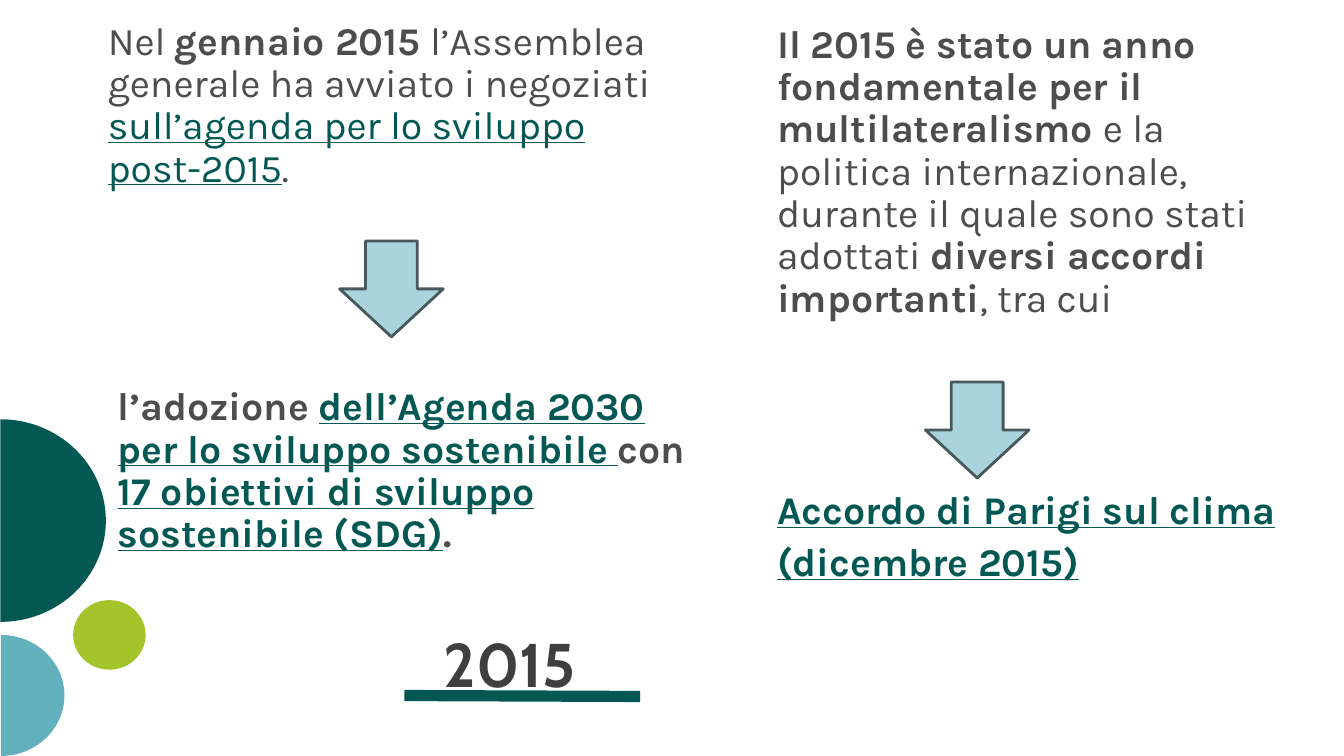
import pptx
import pptx.util
import pptx.dml.color
import pptx.enum.shapes
import pptx.enum.text
import pptx.oxml

Pt = pptx.util.Pt
PRESETS = pptx.enum.shapes.MSO_SHAPE
TEAL, GREY, DARK = "035854", "4D4D4D", "3F3F3F"
SKY, LIME, PALE, SLATE = "64B1BE", "A3C42A", "A9D4DB", "47595C"


def colour(value):
    return pptx.dml.color.RGBColor.from_string(value)


def place(item, left, top, width, height):
    item.left, item.top = Pt(left), Pt(top)
    item.width, item.height = Pt(width), Pt(height)


def set_frame(frame, insets, anchor=pptx.enum.text.MSO_ANCHOR.TOP):
    frame.word_wrap = True
    frame.auto_size = pptx.enum.text.MSO_AUTO_SIZE.NONE
    frame.vertical_anchor = anchor
    left, top, right, bottom = insets
    frame.margin_left, frame.margin_top = Pt(left), Pt(top)
    frame.margin_right, frame.margin_bottom = Pt(right), Pt(bottom)


def write(paragraph, runs, size=28, font="Karla", indent=18, spacing=0.9, before=0):
    properties = paragraph._p.get_or_add_pPr()
    properties.set("marL", str(Pt(indent)))
    properties.set("indent", "0")
    pptx.oxml.ns
    bullet = pptx.oxml.xmlchemy.OxmlElement("a:buNone")
    properties.append(bullet)
    paragraph.alignment = pptx.enum.text.PP_ALIGN.LEFT
    paragraph.line_spacing = spacing
    paragraph.space_before = Pt(before)
    paragraph.space_after = Pt(0)
    for wording, shade, bold, underline in runs:
        run = paragraph.add_run()
        run.text = wording
        run.font.size = Pt(size)
        run.font.name = font
        run.font.bold = bold
        run.font.underline = underline
        run.font.color.rgb = colour(shade)


def add_filled(shapes, preset, box, fill):
    shape = shapes.add_shape(preset, *[Pt(length) for length in box])
    shape.shadow.inherit = False
    shape.fill.solid()
    shape.fill.fore_color.rgb = colour(fill)
    shape.line.fill.background()
    return shape


def add_down_arrow(slide, left, top):
    arrow = add_filled(slide.shapes, PRESETS.DOWN_ARROW, (left, top, 74, 68.5), PALE)
    arrow.line.fill.solid()
    arrow.line.color.rgb = colour(SLATE)
    arrow.line.width = Pt(2)


def add_circles(slide, left, top):
    circles = slide.shapes.add_group_shape().shapes
    for preset, x, y, width, height, fill in (
        (PRESETS.PIE, -72, 0, 144.7, 150.5, TEAL),
        (PRESETS.PIE, -42.5, 154.8, 86.4, 90.7, SKY),
        (PRESETS.OVAL, 53.3, 131, 49.7, 51.8, LIME),
    ):
        circle = add_filled(circles, preset, (left + x, top + y, width, height), fill)
        circle.rotation = 270
        if preset == PRESETS.PIE:
            circle.adjustments[0] = 0
            circle.adjustments[1] = 108


def add_year(slide, year, left, top):
    place(year, left, top, 172.8, 108.7)
    set_frame(year.text_frame, (0, 0, 0, 0), pptx.enum.text.MSO_ANCHOR.MIDDLE)
    write(year.text_frame.paragraphs[0], [("2015", DARK, True, False)],
          size=44, font="Cabin", indent=0, spacing=0.8)
    rule = slide.shapes.add_connector(
        pptx.enum.shapes.MSO_CONNECTOR.STRAIGHT,
        Pt(left - 28), Pt(top + 72.7), Pt(left + 140.4), Pt(top + 73.4))
    rule.line.color.rgb = colour(TEAL)
    rule.line.width = Pt(8)
    rule._element.spPr.append(pptx.oxml.xmlchemy.OxmlElement("a:effectLst"))


def add_agenda_column(slide, negotiations, left, top):
    place(negotiations, left, top, 471.6, 173.5)
    set_frame(negotiations.text_frame, (0, 21.6, 7.2, 3.6))
    write(negotiations.text_frame.paragraphs[0], [
        ("Nel ", GREY, False, False),
        ("gennaio 2015 ", GREY, True, False),
        ("l’Assemblea generale ha avviato i negoziati ", GREY, False, False),
        ("sull’agenda per lo sviluppo post-2015", TEAL, False, True),
        (".", GREY, False, False),
    ])
    add_down_arrow(slide, left + 183.6, top + 178.6)
    adoption = slide.shapes.add_textbox(
        Pt(left), Pt(top + 279.4), Pt(440.6), Pt(129.6))
    set_frame(adoption.text_frame, (7.2, 3.6, 7.2, 3.6))
    write(adoption.text_frame.paragraphs[0], [
        ("l’adozione ", GREY, True, False),
        ("dell’Agenda 2030 per lo sviluppo sostenibile ", TEAL, True, True),
        ("con", GREY, True, False),
        (" 17 obiettivi di sviluppo sostenibile (SDG)", TEAL, True, True),
        (".", GREY, True, False),
    ])


def add_climate_column(slide, agreements, left, top):
    place(agreements, left, top, 383, 437)
    set_frame(agreements.text_frame, (0, 3.6, 7.2, 3.6))
    write(agreements.text_frame.paragraphs[0], [
        ("Il 2015 è stato un anno fondamentale per il multilateralismo ", GREY, True, False),
        ("e la politica internazionale, durante il quale sono stati adottati",
         GREY, False, False),
        (" diversi accordi importanti", GREY, True, False),
        (", tra cui", GREY, False, False),
    ])
    write(agreements.text_frame.add_paragraph(),
          [("Accordo di Parigi sul clima (dicembre 2015)", TEAL, True, True)],
          spacing=1.1, before=114.6)
    add_down_arrow(slide, left + 123.9, top + 259.2)


def main():
    deck = pptx.Presentation()
    deck.slide_width, deck.slide_height = Pt(960), Pt(540)
    slide = deck.slides.add_slide(deck.slide_layouts[3])
    year, negotiations, agreements = slide.placeholders
    add_circles(slide, 0, 296.6)
    add_year(slide, year, 316.8, 424.1)
    add_agenda_column(slide, negotiations, 59, -6.5)
    add_climate_column(slide, agreements, 537.1, 13.7)
    deck.save("out.pptx")


if __name__ == "__main__":
    main()
